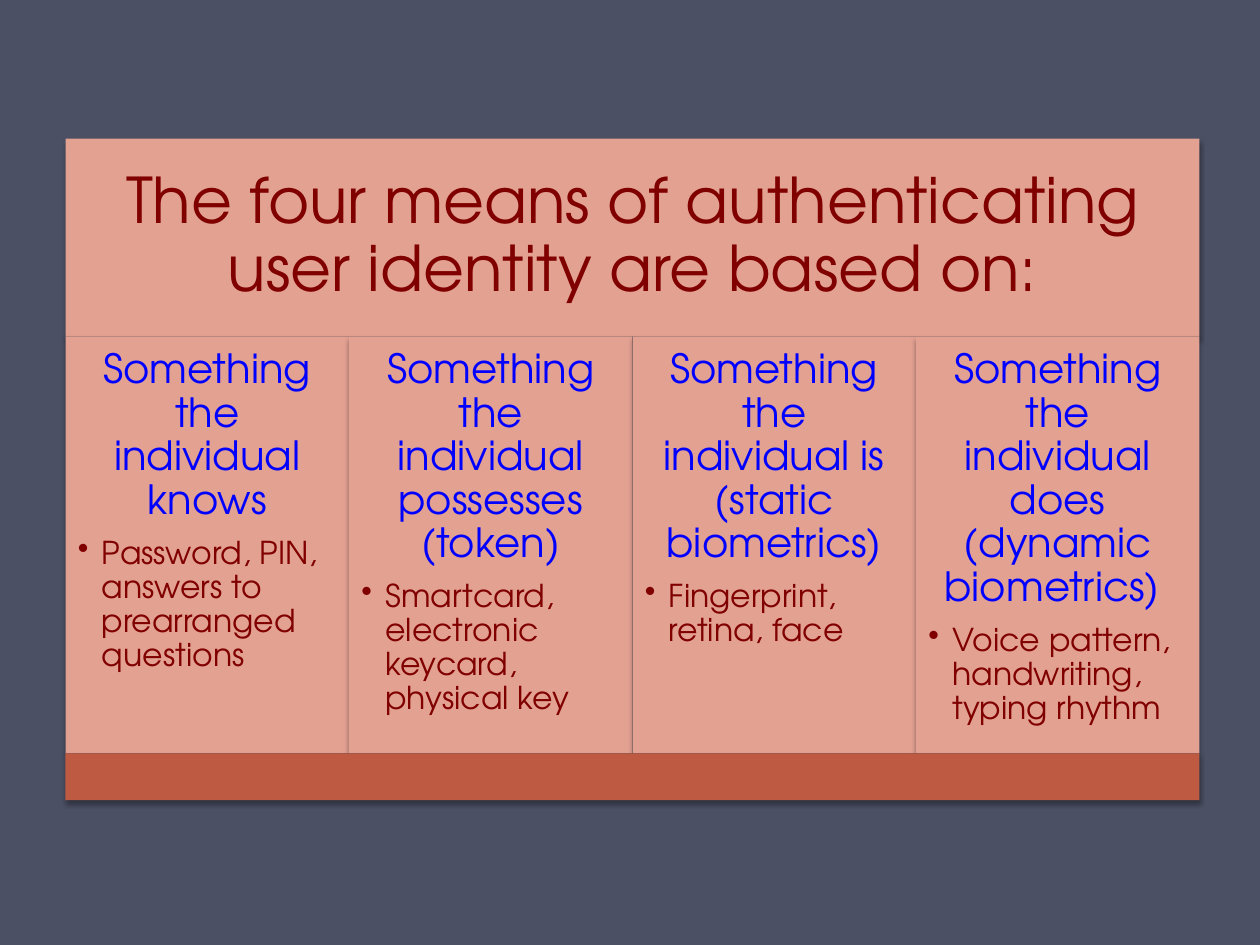
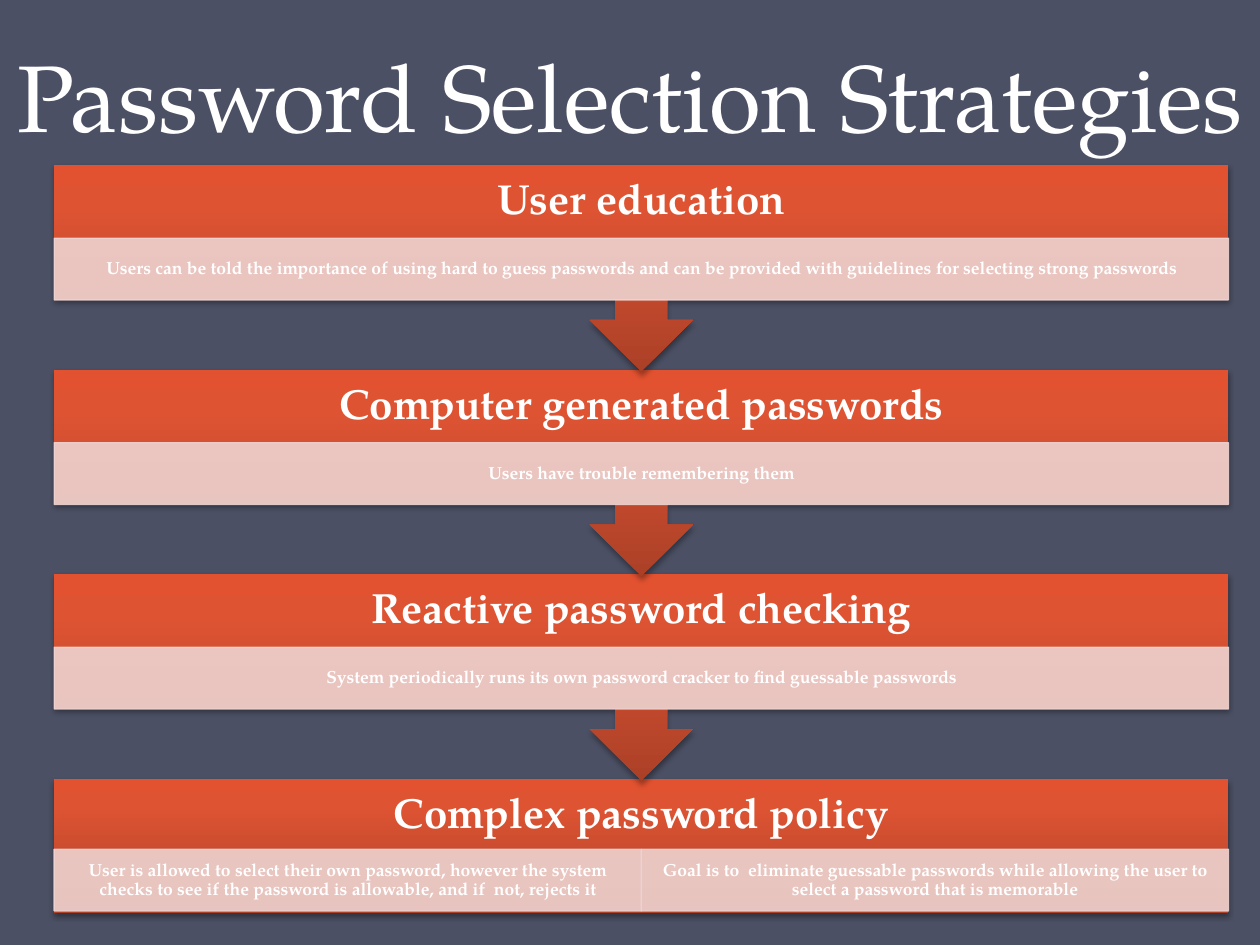
from dataclasses import dataclass

from pptx import Presentation
from pptx.dml.color import RGBColor
from pptx.enum.shapes import MSO_SHAPE
from pptx.enum.text import MSO_ANCHOR, MSO_AUTO_SIZE, PP_ALIGN
from pptx.oxml import parse_xml
from pptx.oxml.ns import nsdecls, qn
from pptx.util import Inches, Pt

RECTANGLE = MSO_SHAPE.RECTANGLE
ARROW_CALLOUT = MSO_SHAPE.DOWN_ARROW_CALLOUT
TOP, MIDDLE, BOTTOM = MSO_ANCHOR.TOP, MSO_ANCHOR.MIDDLE, MSO_ANCHOR.BOTTOM
CENTER, LEFT = PP_ALIGN.CENTER, PP_ALIGN.LEFT
NO_AUTOFIT = MSO_AUTO_SIZE.NONE
TITLE_ONLY = 5


@dataclass(frozen=True)
class Theme:
    background: str = "4B5064"
    panel: str = "E3A192"
    footer: str = "BE5A42"
    maroon: str = "800000"
    blue: str = "0000FF"
    white: str = "FFFFFF"
    band: str = "EED3D0"
    gradient: tuple = ((0, "AB4027"), (80, "DE5433"), (100, "E35230"))
    sans: str = "TeX Gyre Adventor"
    serif: str = "TeX Gyre Pagella"
    title_size: int = 54
    question_size: int = 36
    step_size: int = 24
    means_size: int = 23
    example_size: int = 18
    detail_size: int = 10


THEME = Theme()

MEANS = [
    ("Something the individual knows",
     "Password, PIN, answers to prearranged questions"),
    ("Something the individual possesses (token)",
     "Smartcard, electronic keycard, physical key"),
    ("Something the individual is (static biometrics)",
     "Fingerprint, retina, face"),
    ("Something the individual does (dynamic biometrics) ",
     "Voice pattern, handwriting, typing rhythm"),
]

STRATEGIES = [
    ("User education",
     ["Users can be told the importance of using hard to guess passwords and "
      "can be provided with guidelines for selecting strong passwords"]),
    ("Computer generated passwords", ["Users have trouble remembering them"]),
    ("Reactive password checking",
     ["System periodically runs its own password cracker to find guessable passwords"]),
    ("Complex password policy",
     ["User is allowed to select their own password, however the system checks "
      "to see if the password is allowable, and if  not, rejects it",
      "Goal is to  eliminate guessable passwords while allowing the user to "
      "select a password that is memorable"]),
]


def write_text(paragraph, text, *, size, color, font, bold=False, align=CENTER,
               line_spacing=0.9, space_after=0.35, bullet=False):
    if bullet:
        properties = paragraph._p.get_or_add_pPr()
        properties.set("marL", str(Inches(0.19)))
        properties.set("indent", str(Inches(-0.19)))
        properties.append(parse_xml(f'<a:buChar {nsdecls("a")} char="•"/>'))
        paragraph.level = 1
    paragraph.alignment = align
    paragraph.line_spacing = line_spacing
    paragraph.space_before = Pt(0)
    paragraph.space_after = Pt(size * space_after)
    run = paragraph.add_run()
    run.text = text
    run.font.name = font
    run.font.size = Pt(size)
    run.font.bold = bold
    run.font.color.rgb = RGBColor.from_string(color)


class Deck:
    def __init__(self, theme):
        self.theme = theme
        self.slide = None
        self.presentation = Presentation()
        self.presentation.slide_width = Inches(10)
        self.presentation.slide_height = Inches(7.5)
        self.paint(self.presentation.slide_master.background.fill, theme.background)

    def paint(self, fill, color):
        fill.solid()
        fill.fore_color.rgb = RGBColor.from_string(color)

    def add_slide(self):
        layout = self.presentation.slide_layouts[TITLE_ONLY]
        self.slide = self.presentation.slides.add_slide(layout)

    def set_frame(self, shape, anchor, insets):
        frame = shape.text_frame
        frame.word_wrap = True
        frame.auto_size = NO_AUTOFIT
        frame.vertical_anchor = anchor
        frame.margin_left, frame.margin_top, frame.margin_right, frame.margin_bottom = (
            Inches(inset) for inset in insets)
        return frame

    def title(self, text, box, anchor, insets, **text_format):
        shape = self.slide.shapes.title
        shape.left, shape.top, shape.width, shape.height = (
            Inches(length) for length in box)
        frame = self.set_frame(shape, anchor, insets)
        write_text(frame.paragraphs[0], text, **text_format)
        return shape

    def shape(self, kind, box):
        shape = self.slide.shapes.add_shape(kind, *(Inches(length) for length in box))
        shape.shadow.inherit = False
        shape.line.fill.background()
        return shape

    def drop_shadow(self, shape):
        shape.shadow.inherit = False
        effects = shape._element.spPr.find(qn("a:effectLst"))
        effects.append(parse_xml(
            f'<a:outerShdw {nsdecls("a")} blurRad="{Pt(3.1)}" dist="{Pt(1.8)}" '
            'dir="5400000" rotWithShape="0"><a:srgbClr val="000000">'
            '<a:alpha val="35000"/></a:srgbClr></a:outerShdw>'))

    def panel(self, box, color):
        shape = self.shape(RECTANGLE, box)
        self.paint(shape.fill, color)
        self.drop_shadow(shape)
        return shape

    def means_column(self, box, means, example):
        shape = self.panel(box, self.theme.panel)
        frame = self.set_frame(shape, TOP, (0.1,) * 4)
        write_text(frame.paragraphs[0], means, size=self.theme.means_size,
                   color=self.theme.blue, font=self.theme.sans)
        write_text(frame.add_paragraph(), example, size=self.theme.example_size,
                   color=self.theme.maroon, font=self.theme.sans, align=LEFT,
                   space_after=0.15, bullet=True)

    def strategy(self, kind, box, text, band_height):
        shape = self.shape(kind, box)
        shape.fill.gradient()
        shape.fill.gradient_angle = 90
        stops = shape._element.spPr.find(qn("a:gradFill")).find(qn("a:gsLst"))
        for stop in list(stops):
            stops.remove(stop)
        for position, color in self.theme.gradient:
            stops.append(parse_xml(
                f'<a:gs {nsdecls("a")} pos="{position * 1000}">'
                f'<a:srgbClr val="{color}"/></a:gs>'))
        self.drop_shadow(shape)
        frame = self.set_frame(shape, MIDDLE, (0.19, 0, 0.19, band_height))
        write_text(frame.paragraphs[0], text, size=self.theme.step_size,
                   color=self.theme.white, font=self.theme.serif, bold=True)

    def detail_band(self, box, text):
        shape = self.shape(RECTANGLE, box)
        self.paint(shape.fill, self.theme.band)
        self.paint(shape.line.fill, self.theme.band)
        shape.line.width = Pt(0.75)
        for color in shape._element.spPr.iter(qn("a:srgbClr")):
            color.append(parse_xml(f'<a:alpha {nsdecls("a")} val="90000"/>'))
        frame = self.set_frame(shape, MIDDLE, (0.08, 0.01, 0.08, 0.01))
        write_text(frame.paragraphs[0], text, size=self.theme.detail_size,
                   color=self.theme.white, font=self.theme.serif, bold=True)


def build_means_slide(deck):
    theme = deck.theme
    left, width = 0.52, 9
    column_top, column_height = 2.67, 3.31
    column_width = width / len(MEANS)
    deck.add_slide()
    title = deck.title("The four means of authenticating user identity are based on:",
                       (left, 1.1, width, 1.57), MIDDLE, (0.15,) * 4,
                       size=theme.question_size, color=theme.maroon, font=theme.sans)
    deck.paint(title.fill, theme.panel)
    deck.drop_shadow(title)
    for index, (means, example) in enumerate(MEANS):
        box = (left + index * column_width, column_top, column_width, column_height)
        deck.means_column(box, means, example)
    deck.panel((left, column_top + column_height, width, 0.37), theme.footer)


def build_strategies_slide(deck):
    theme = deck.theme
    left, width = 0.43, 9.32
    first_top, last_top = 1.31, 6.18
    band_height = 0.49
    last = len(STRATEGIES) - 1
    pitch = (last_top - first_top) / last
    deck.add_slide()
    deck.title("Password Selection Strategies", (0, 0, 10, 1.25), BOTTOM,
               (0.1, 0.05, 0.1, 0.05), size=theme.title_size, color=theme.white,
               font=theme.serif, line_spacing=Pt(58), space_after=0)
    for index, (name, details) in reversed(list(enumerate(STRATEGIES))):
        top = first_top + index * pitch
        if index == last:
            kind, height, band_offset = RECTANGLE, 1.07, 0.56
        else:
            kind, height, band_offset = ARROW_CALLOUT, 1.64, 0.58
        deck.strategy(kind, (left, top, width, height), name, band_height)
        band_width = width / len(details)
        for column, detail in enumerate(details):
            deck.detail_band((left + column * band_width, top + band_offset,
                              band_width, band_height), detail)


def main():
    deck = Deck(THEME)
    build_means_slide(deck)
    build_strategies_slide(deck)
    deck.presentation.save("out.pptx")


if __name__ == "__main__":
    main()
